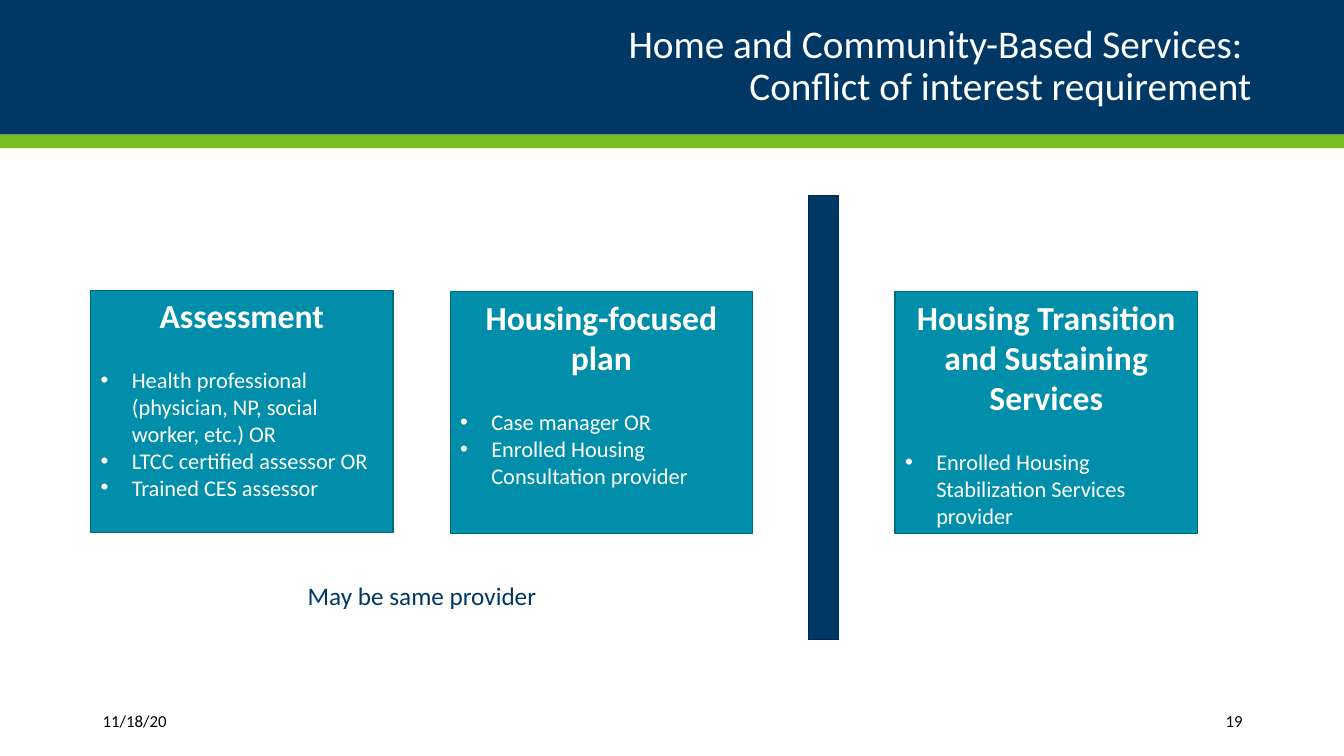
from dataclasses import dataclass

from lxml import etree
from pptx import Presentation
from pptx.dml.color import RGBColor
from pptx.enum.shapes import MSO_SHAPE
from pptx.enum.text import MSO_ANCHOR, MSO_AUTO_SIZE, PP_ALIGN
from pptx.oxml.ns import qn
from pptx.util import Inches, Pt

RECT, BAR = MSO_SHAPE.RECTANGLE, MSO_SHAPE.FLOWCHART_PROCESS
LEFT, MID, RIGHT = PP_ALIGN.LEFT, PP_ALIGN.CENTER, PP_ALIGN.RIGHT
TOP, CENTER = MSO_ANCHOR.TOP, MSO_ANCHOR.MIDDLE
FIXED = MSO_AUTO_SIZE.NONE
WIDE, HIGH = Inches(13.33), Inches(7.5)


@dataclass(frozen=True)
class Theme:
    font: str = "Calibri"
    navy: str = "003865"
    green: str = "78BE21"
    teal: str = "008EAA"
    navy_edge: str = "00294B"
    teal_edge: str = "00697E"
    white: str = "FFFFFF"
    black: str = "000000"
    title: int = 28
    head: int = 24
    note: int = 18
    item: int = 16
    foot: int = 12
    edge: float = 0.85


@dataclass(frozen=True)
class Area:
    """Left, top, width and height in percent of the slide."""
    x: float
    y: float
    w: float
    h: float

    def frame(self) -> tuple[int, int, int, int]:
        return (int(WIDE * self.x / 100), int(HIGH * self.y / 100),
                int(WIDE * self.w / 100), int(HIGH * self.h / 100))


@dataclass(frozen=True)
class Block:
    area: Area
    fill: str
    edge: str = ""
    form: int = RECT


@dataclass(frozen=True)
class Card:
    x: float
    y: float
    head: str
    items: tuple[str, ...]


@dataclass(frozen=True)
class Label:
    area: Area
    text: str
    size: int
    color: str
    align: int
    anchor: int


THEME = Theme()
CARD_W, CARD_H = 22.5, 32
CARDS = (
    Card(6.75, 38.4, "Assessment", (
        "Health professional (physician, NP, social worker, etc.) OR",
        "LTCC certified assessor OR",
        "Trained CES assessor")),
    Card(33.5, 38.6, "Housing-focused plan", (
        "Case manager OR",
        "Enrolled Housing Consultation provider")),
    Card(66.6, 38.6, "Housing Transition and Sustaining Services", (
        "Enrolled Housing Stabilization Services provider",)),
)
BLOCKS = (
    Block(Area(0, 0, 100, 17.8), THEME.navy),
    Block(Area(0, 17.8, 100, 1.8), THEME.green),
    Block(Area(60.15, 25.9, 2.25, 58.7), THEME.navy, THEME.navy_edge, BAR),
)
LABELS = (
    Label(Area(6.75, 76.1, 49.3, 5.4), "May be same provider",
          THEME.note, THEME.navy, MID, TOP),
    Label(Area(6.9, 92.7, 11.2, 5.3), "11/18/20",
          THEME.foot, THEME.black, LEFT, CENTER),
    Label(Area(81.2, 92.7, 12, 5.3), "19",
          THEME.foot, THEME.black, RIGHT, CENTER),
)
TITLE = "Home and Community-Based Services: \vConflict of interest requirement"


def style(para, size: int, color: str, align: int, bold: bool = False) -> None:
    para.alignment = align
    for run in para.runs:
        font = run.font
        font.name, font.size, font.bold = THEME.font, Pt(size), bold
        font.color.rgb = RGBColor.from_string(color)


def bullet(para) -> None:
    props = para._p.get_or_add_pPr()
    props.set("marL", str(Inches(0.31)))
    props.set("indent", str(-Inches(0.31)))
    etree.SubElement(props, qn("a:buFont")).set("typeface", "Arial")
    etree.SubElement(props, qn("a:buChar")).set("char", "•")


def add_block(slide, block: Block):
    shape = slide.shapes.add_shape(block.form, *block.area.frame())
    shape.shadow.inherit = False
    shape.fill.solid()
    shape.fill.fore_color.rgb = RGBColor.from_string(block.fill)
    if block.edge:
        shape.line.color.rgb = RGBColor.from_string(block.edge)
        shape.line.width = Pt(THEME.edge)
    else:
        shape.line.fill.background()
    return shape


def add_card(slide, card: Card) -> None:
    area = Area(card.x, card.y, CARD_W, CARD_H)
    shape = add_block(slide, Block(area, THEME.teal, THEME.teal_edge))
    text = shape.text_frame
    text.word_wrap, text.auto_size = True, FIXED
    text.vertical_anchor = TOP
    text.text = "\n".join((card.head, *card.items))
    head, *items = text.paragraphs
    style(head, THEME.head, THEME.white, MID, True)
    head.space_after = Pt(22)
    for para in items:
        style(para, THEME.item, THEME.white, LEFT)
        bullet(para)


def add_label(slide, label: Label) -> None:
    text = slide.shapes.add_textbox(*label.area.frame()).text_frame
    text.word_wrap, text.vertical_anchor = True, label.anchor
    text.text = label.text
    style(text.paragraphs[0], label.size, label.color, label.align)


def set_title(slide) -> None:
    """Fill the title placeholder and raise it above the header band."""
    title = slide.shapes.title
    area = Area(3.6, -0.9, 89.5, 19.4)
    title.left, title.top, title.width, title.height = area.frame()
    text = title.text_frame
    text.word_wrap, text.auto_size = True, FIXED
    text.vertical_anchor = CENTER
    text.margin_left = text.margin_right = 0
    text.text = TITLE
    para = text.paragraphs[0]
    style(para, THEME.title, THEME.white, RIGHT)
    para.line_spacing = 0.9
    para.space_before = Pt(0)
    slide.shapes.element.append(title.element)


def main() -> None:
    deck = Presentation()
    deck.slide_width, deck.slide_height = WIDE, HIGH
    slide = deck.slides.add_slide(deck.slide_layouts.get_by_name("Title Only"))
    for block in BLOCKS:
        add_block(slide, block)
    set_title(slide)
    for card in CARDS:
        add_card(slide, card)
    for label in LABELS:
        add_label(slide, label)
    deck.save("out.pptx")


if __name__ == "__main__":
    main()
